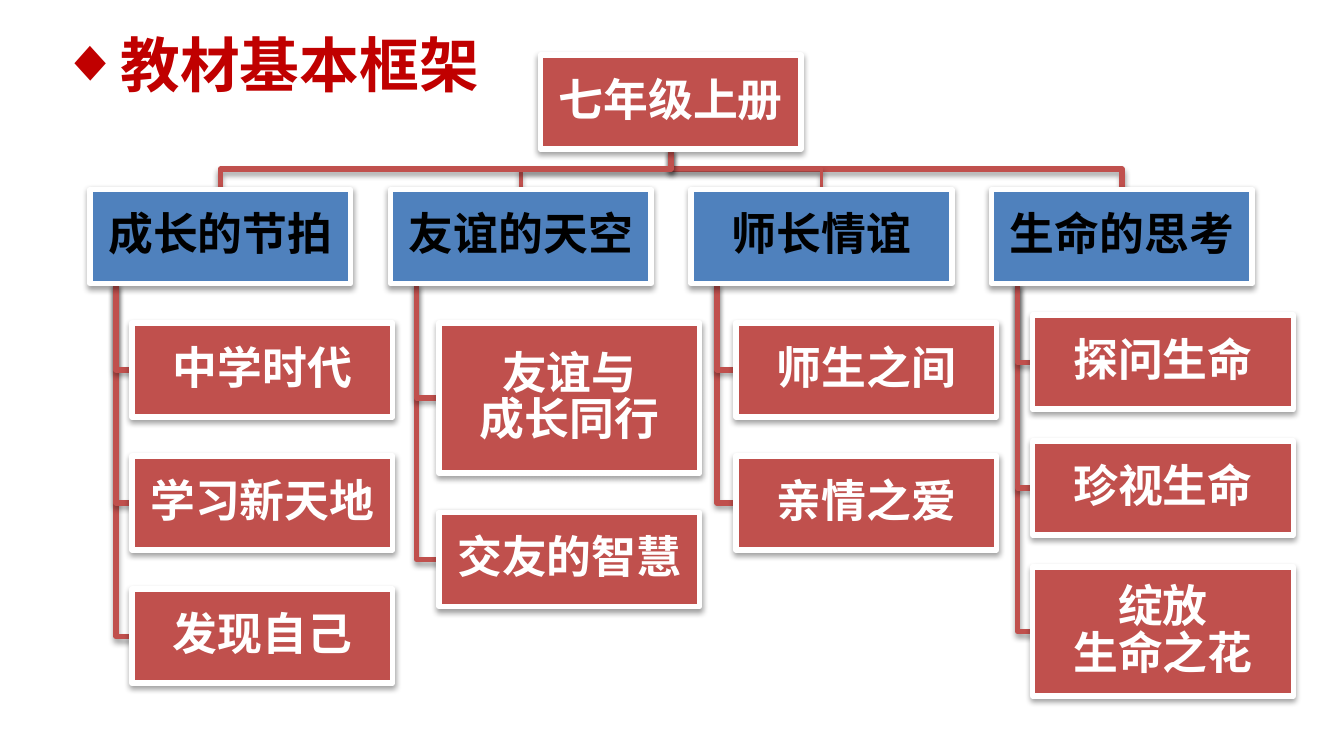
from dataclasses import dataclass

from lxml import etree
from pptx import Presentation
from pptx.dml.color import RGBColor
from pptx.enum.shapes import MSO_SHAPE
from pptx.enum.text import MSO_ANCHOR, PP_ALIGN
from pptx.oxml.ns import qn
from pptx.util import Pt

RECTANGLE = MSO_SHAPE.RECTANGLE
MIDDLE = MSO_ANCHOR.MIDDLE
CENTER = PP_ALIGN.CENTER


@dataclass(frozen=True)
class Theme:
    red: RGBColor = RGBColor(0xC0, 0x50, 0x4D)
    blue: RGBColor = RGBColor(0x4F, 0x81, 0xBD)
    title: RGBColor = RGBColor(0xC0, 0x00, 0x00)
    white: RGBColor = RGBColor(0xFF, 0xFF, 0xFF)
    black: RGBColor = RGBColor(0x00, 0x00, 0x00)
    latin: str = "Arial"
    east_asian: str = "Noto Sans CJK SC"
    title_size: int = 32
    box_size: int = 24
    box_spacing: int = 25
    line: int = 3
    thin_line: int = 2


THEME = Theme()
BOX_WIDTH, BOX_HEIGHT = 139.7, 50.4
ROOT_LEFT, ROOT_TOP = 289.5, 29.5
UNIT_LEFT, UNIT_TOP, UNIT_STEP = 48.2, 101.5, 161
RAIL_INDENT = 14

UNITS = [
    ("成长的节拍", 22.5, 21, THEME.line,
     [("中学时代", 50.4), ("学习新天地", 50.4), ("发现自己", 50.4)]),
    ("友谊的天空", 26, 21, THEME.thin_line,
     [("友谊与\n成长同行", 80.6), ("交友的智慧", 50.4)]),
    ("师长情谊", 24, 21, THEME.thin_line,
     [("师生之间", 50.4), ("亲情之爱", 50.4)]),
    ("生命的思考", 22, 17, THEME.line,
     [("探问生命", 50.4), ("珍视生命", 50.4), ("绽放\n生命之花", 69.1)]),
]


def write_text(frame, text, size, color, font, spacing=None, bullet=None, indent=0):
    frame.word_wrap = True
    frame.vertical_anchor = MIDDLE
    for index, line in enumerate(text.split("\n")):
        paragraph = frame.add_paragraph() if index else frame.paragraphs[0]
        paragraph.alignment = CENTER
        if spacing:
            paragraph.line_spacing = Pt(spacing)
        if bullet:
            properties = paragraph._p.get_or_add_pPr()
            properties.set("marL", str(Pt(indent)))
            properties.set("indent", str(-Pt(indent)))
            etree.SubElement(properties, qn("a:buFont"), typeface=THEME.latin)
            etree.SubElement(properties, qn("a:buChar"), char=bullet)
        run = paragraph.add_run()
        run.text = line
        run.font.size = Pt(size)
        run.font.bold = True
        run.font.color.rgb = color
        run.font.name = font
        etree.SubElement(run._r.get_or_add_rPr(), qn("a:ea"), typeface=THEME.east_asian)


def style_outline(shape, color, width):
    shape.line.color.rgb = color
    shape.line.width = Pt(width)
    etree.SubElement(shape.line._get_or_add_ln(), qn("a:round"))
    shape.shadow.inherit = False
    effects = shape._element.spPr.find(qn("a:effectLst"))
    shadow = etree.SubElement(
        effects, qn("a:outerShdw"), blurRad=str(Pt(3.1)), dist=str(Pt(1.7)),
        dir="5400000", rotWithShape="0")
    tint = etree.SubElement(shadow, qn("a:srgbClr"), val=str(THEME.black))
    etree.SubElement(tint, qn("a:alpha"), val="37000")


def add_box(slide, left, top, height, text, fill, color):
    shape = slide.shapes.add_shape(RECTANGLE, Pt(left), Pt(top), Pt(BOX_WIDTH), Pt(height))
    shape.fill.solid()
    shape.fill.fore_color.rgb = fill
    style_outline(shape, THEME.white, THEME.line)
    frame = shape.text_frame
    frame.margin_left = frame.margin_right = Pt(1.5)
    frame.margin_top = frame.margin_bottom = Pt(1.5)
    write_text(frame, text, THEME.box_size, color, THEME.latin, spacing=THEME.box_spacing)


def add_path(slide, points, width):
    corners = [(Pt(x), Pt(y)) for x, y in points]
    builder = slide.shapes.build_freeform(*corners[0], scale=1.0)
    builder.add_line_segments(corners[1:], close=False)
    shape = builder.convert_to_shape()
    shape.fill.background()
    style_outline(shape, THEME.red, width)


def add_title(slide, left, top, width, height):
    box = slide.shapes.add_textbox(Pt(left), Pt(top), Pt(width), Pt(height))
    write_text(box.text_frame, "教材基本框架", THEME.title_size, THEME.title,
               THEME.east_asian, bullet="◆", indent=27)


def add_root(slide, left, top):
    center, bottom = left + BOX_WIDTH / 2, top + BOX_HEIGHT
    middle = (bottom + UNIT_TOP) / 2
    for index, unit in reversed(list(enumerate(UNITS))):
        unit_center = UNIT_LEFT + index * UNIT_STEP + BOX_WIDTH / 2
        add_path(slide, [(center, bottom), (center, middle), (unit_center, middle),
                         (unit_center, UNIT_TOP)], unit[3])
    add_box(slide, left, top, BOX_HEIGHT, "七年级上册", THEME.red, THEME.white)


def add_unit(slide, left, top, name, indent, gap, lessons):
    rail, bottom = left + RAIL_INDENT, top + BOX_HEIGHT
    lesson_left, lesson_top = left + indent, bottom + gap
    placed = []
    for text, height in lessons:
        placed.append((text, lesson_top, height))
        lesson_top += height + gap
    for text, lesson_top, height in reversed(placed):
        middle = lesson_top + height / 2
        add_path(slide, [(rail, bottom), (rail, middle), (lesson_left, middle)], THEME.line)
    add_box(slide, left, top, BOX_HEIGHT, name, THEME.blue, THEME.black)
    for text, lesson_top, height in placed:
        add_box(slide, lesson_left, lesson_top, height, text, THEME.red, THEME.white)


def main():
    presentation = Presentation()
    presentation.slide_width, presentation.slide_height = Pt(720), Pt(405)
    slide = presentation.slides.add_slide(presentation.slide_layouts[6])
    add_root(slide, ROOT_LEFT, ROOT_TOP)
    for index, (name, indent, gap, _, lessons) in enumerate(UNITS):
        add_unit(slide, UNIT_LEFT + index * UNIT_STEP, UNIT_TOP, name, indent, gap, lessons)
    add_title(slide, 8.6, 0, 272.2, 67.7)
    presentation.save("out.pptx")


if __name__ == "__main__":
    main()
